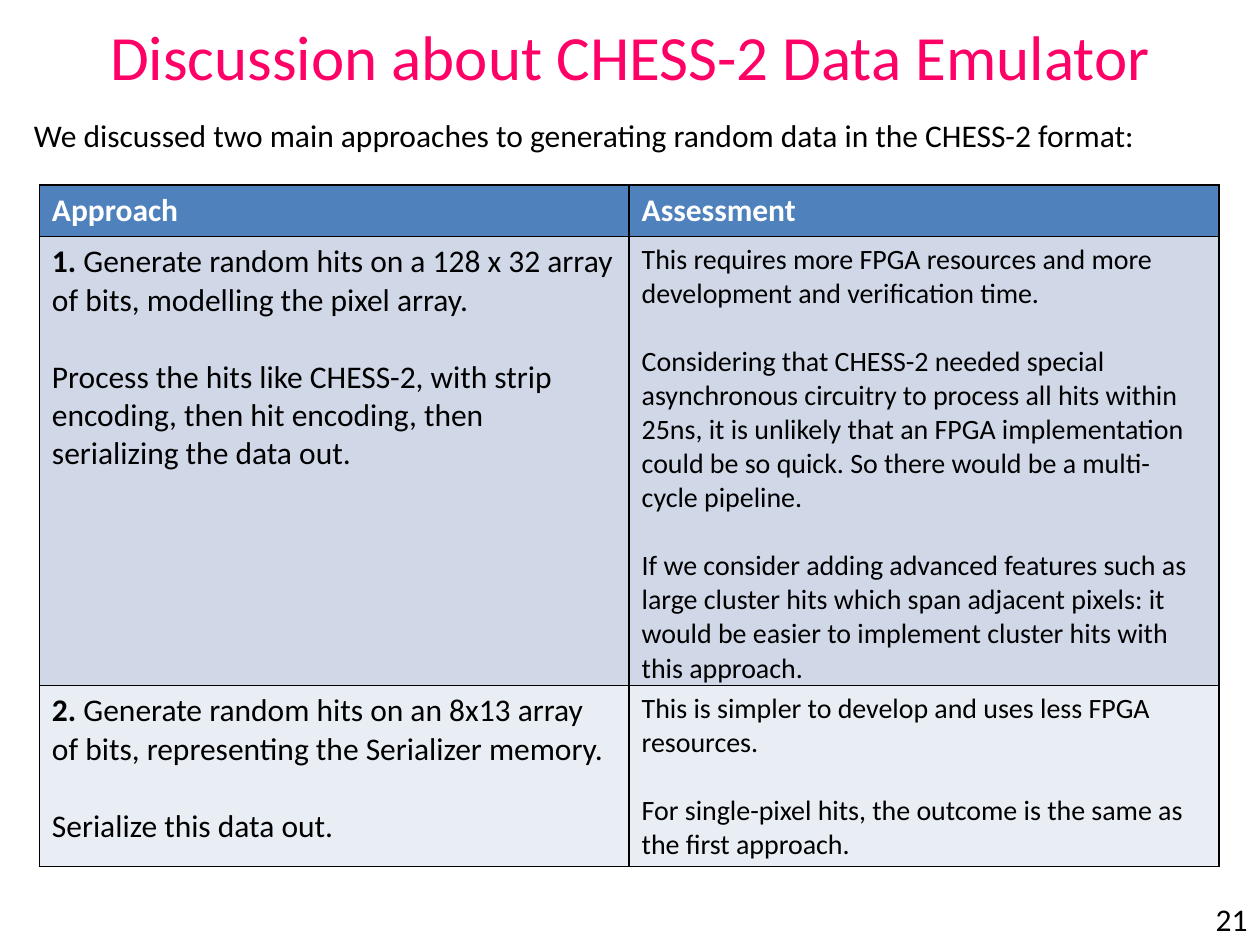
from pptx import Presentation
from pptx.dml.color import RGBColor
from pptx.enum.text import MSO_ANCHOR as Anchor, PP_ALIGN as Align
from pptx.oxml import parse_xml
from pptx.oxml.ns import nsdecls
from pptx.util import Pt


def rgb(value):
    return RGBColor.from_string(value)


def write(frame, *paragraphs, size=18, color="000000", bold=False, lead="",
          align=Align.LEFT, anchor=Anchor.TOP, gap=0):
    """Fill a text frame; lead is a bold start of the first paragraph."""
    frame.word_wrap = True
    frame.vertical_anchor = anchor
    for i, text in enumerate(paragraphs):
        paragraph = frame.paragraphs[0] if i == 0 else frame.add_paragraph()
        paragraph.alignment = align
        if i:
            paragraph.space_before = Pt(gap)
        pieces = [(text, bold)]
        if lead and i == 0:
            pieces.insert(0, (lead, True))
        for piece, is_bold in pieces:
            run = paragraph.add_run()
            run.text = piece
            run.font.name = "Calibri"
            run.font.size = Pt(size)
            run.font.bold = is_bold
            run.font.color.rgb = rgb(color)


prs = Presentation()
prs.slide_width, prs.slide_height = Pt(720), Pt(540)
slide = prs.slides.add_slide(prs.slide_layouts[5])

title = slide.shapes.title
title.left, title.top, title.width, title.height = Pt(36), Pt(9.4), Pt(648), Pt(44.6)
write(title.text_frame, "Discussion about CHESS-2 Data Emulator", size=36,
      color="FF0066", align=Align.CENTER, anchor=Anchor.MIDDLE)

intro = slide.shapes.add_textbox(Pt(12.3), Pt(62.6), Pt(692.6), Pt(29))
write(intro.text_frame,
      "We discussed two main approaches to generating random data in the CHESS-2 format:")

approaches = [
    ("1. ", "D0D8E8",
     ["Generate random hits on a 128 x 32 array of bits, modelling the pixel array.",
      "Process the hits like CHESS-2, with strip encoding, then hit encoding, "
      "then serializing the data out."],
     ["This requires more FPGA resources and more development and verification time.",
      "Considering that CHESS-2 needed special asynchronous circuitry to process all hits "
      "within 25ns, it is unlikely that an FPGA implementation could be so quick. "
      "So there would be a multi-cycle pipeline.",
      "If we consider adding advanced features such as large cluster hits which span "
      "adjacent pixels: it would be easier to implement cluster hits with this approach."]),
    ("2. ", "E9EDF4",
     ["Generate random hits on an 8x13 array of bits, representing the Serializer memory.",
      "Serialize this data out."],
     ["This is simpler to develop and uses less FPGA resources.",
      "For single-pixel hits, the outcome is the same as the first approach."]),
]
row_heights = [29.5, 256.6, 103.4]
comparison = slide.shapes.add_table(3, 2, Pt(22.5), Pt(105.6), Pt(674),
                                    Pt(sum(row_heights))).table
for row, height in zip(comparison.rows, row_heights):
    row.height = Pt(height)
for column in comparison.columns:
    column.width = Pt(337)

for cell, heading in zip(comparison.rows[0].cells, ["Approach", "Assessment"]):
    write(cell.text_frame, heading, color="FFFFFF", bold=True)
for row, (number, _, description, assessment) in enumerate(approaches, 1):
    write(comparison.cell(row, 0).text_frame, *description, lead=number, gap=22)
    write(comparison.cell(row, 1).text_frame, *assessment, size=16, gap=19)

row_fills = ["4F81BD"] + [fill for _, fill, _, _ in approaches]
for row, fill in zip(comparison.rows, row_fills):
    for cell in row.cells:
        cell.margin_bottom = Pt(0)
        cell.fill.solid()
        cell.fill.fore_color.rgb = rgb(fill)
        for position, side in enumerate(["lnL", "lnR", "lnT", "lnB"]):
            border = parse_xml(
                f'<a:{side} {nsdecls("a")} w="12700"><a:solidFill>'
                f'<a:srgbClr val="000000"/></a:solidFill></a:{side}>')
            cell._tc.get_or_add_tcPr().insert(position, border)

page_number = slide.shapes.add_textbox(Pt(666), Pt(510.5), Pt(54), Pt(29))
write(page_number.text_frame, "21", align=Align.RIGHT, anchor=Anchor.MIDDLE)
page_number.text_frame.margin_right = Pt(7.2)

prs.save("out.pptx")
